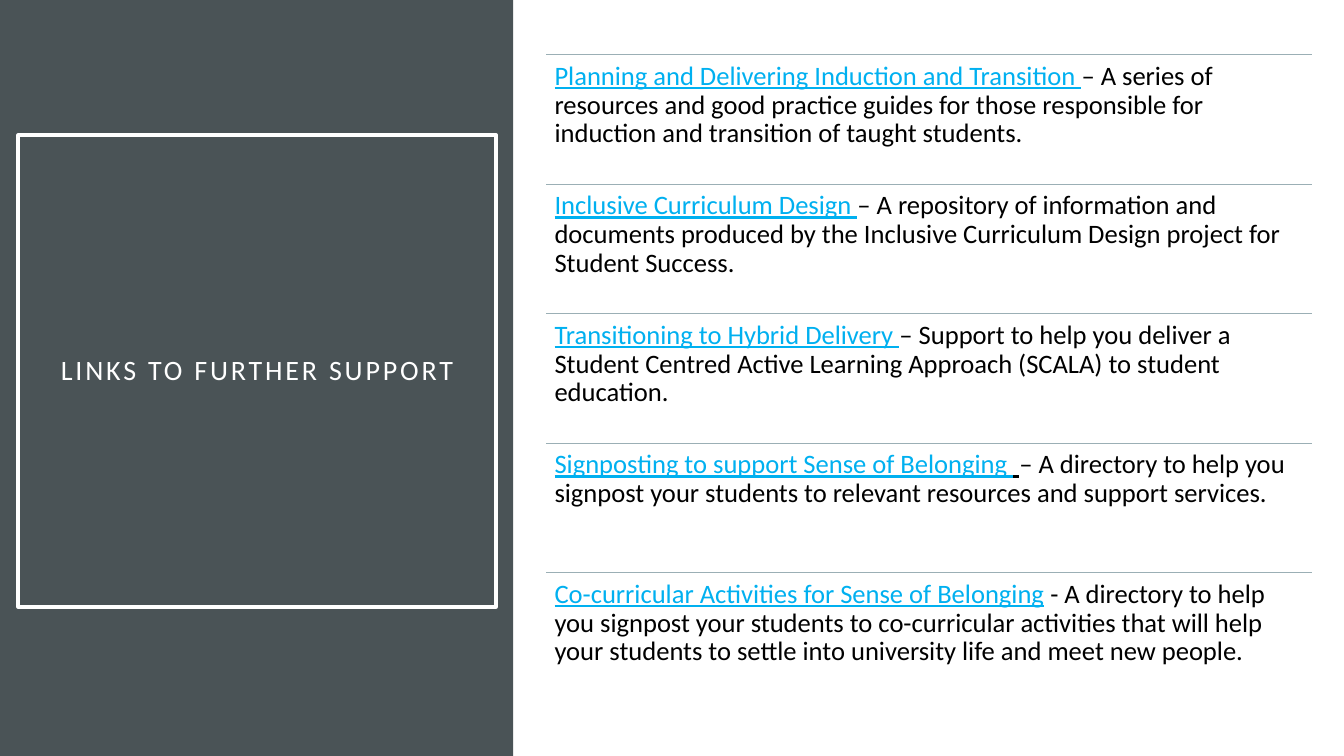
from dataclasses import dataclass

from lxml import etree
from pptx import Presentation
from pptx import util as u
from pptx.dml.color import RGBColor
from pptx.enum import shapes, text
from pptx.oxml.ns import qn


@dataclass(frozen=True)
class Theme:
    font: str = "Calibri"
    panel: str = "4A5356"
    white: str = "FFFFFF"
    ink: str = "000000"
    link: str = "00B0F0"
    rule: str = "9BAFB5"
    head: float = 20
    body: float = 19


ROWS = [
    [("Planning and Delivering Induction and Transition ", "link"),
     ("– A series of resources and good practice guides for those responsible "
      "for induction and transition of taught students.", "plain")],
    [("Inclusive Curriculum Design ", "link"),
     ("– A repository of information and documents produced by the Inclusive "
      "Curriculum Design project for Student Success.", "plain")],
    [("Transitioning to Hybrid Delivery ", "link"),
     ("– Support to help you deliver a Student Centred Active Learning "
      "Approach (SCALA) to student education.", "plain")],
    [("Signposting to support Sense of Belonging ", "link"),
     (" ", "under"),
     ("– A directory to help you signpost your students to relevant resources "
      "and support services.", "plain")],
    [("Co-curricular Activities for Sense of Belonging", "link"),
     (" - A directory to help you signpost your students to co-curricular "
      "activities that will help your students to settle into university life "
      "and meet new people.", "plain")],
]


def write(para, words, font, size, color, under=False, track=0):
    run = para.add_run()
    run.text = words
    run.font.name = font
    run.font.size = u.Pt(size)
    run.font.color.rgb = RGBColor.from_string(color)
    run.font.underline = under
    if track:
        run.font._element.set("spc", str(track * 100))


class Deck:
    """Draws the slide's elements in one theme."""

    def __init__(self, theme):
        self.theme = theme
        self.prs = Presentation()
        self.prs.slide_width = u.Inches(13.33)
        self.prs.slide_height = u.Inches(7.5)
        self.slide = self.prs.slides.add_slide(self.prs.slide_layouts[5])

    def frame(self, shape, inset, anchor):
        frame = shape.text_frame
        frame.word_wrap = True
        frame.auto_size = text.MSO_AUTO_SIZE.NONE
        frame.vertical_anchor = anchor
        frame.margin_left = frame.margin_right = u.Inches(inset)
        frame.margin_top = frame.margin_bottom = u.Inches(inset)
        para = frame.paragraphs[0]
        para.line_spacing = 0.9
        return para

    def panel(self, *box):
        shape = self.slide.shapes.add_shape(
            shapes.MSO_SHAPE.RECTANGLE, *map(u.Inches, box))
        shape.shadow.inherit = False
        shape.fill.solid()
        shape.fill.fore_color.rgb = RGBColor.from_string(self.theme.panel)
        shape.line.fill.background()
        self.slide.shapes._spTree.insert(2, shape._element)

    def title(self, words, *box):
        shape = self.slide.shapes.title
        shape.left, shape.top, shape.width, shape.height = map(u.Inches, box)
        shape.line.color.rgb = RGBColor.from_string(self.theme.white)
        shape.line.width = u.Pt(2.5)
        para = self.frame(shape, 0.2, text.MSO_ANCHOR.MIDDLE)
        para.alignment = text.PP_ALIGN.CENTER
        write(para, words, self.theme.font, self.theme.head, self.theme.white,
              track=2)

    def rule(self, left, top, width):
        line = self.slide.shapes.add_connector(
            shapes.MSO_CONNECTOR.STRAIGHT,
            *map(u.Inches, (left, top, left + width, top)))
        line.line.color.rgb = RGBColor.from_string(self.theme.rule)
        line.line.width = u.Pt(0.5)
        etree.SubElement(line._element.spPr, qn("a:effectLst"))

    def entry(self, parts, *box):
        shape = self.slide.shapes.add_textbox(*map(u.Inches, box))
        para = self.frame(shape, 0.08, text.MSO_ANCHOR.TOP)
        for words, kind in parts:
            color = self.theme.link if kind == "link" else self.theme.ink
            write(para, words, self.theme.font, self.theme.body, color,
                  under=kind != "plain")


def main():
    deck = Deck(Theme())
    deck.panel(0, 0, 5.09, 7.5)
    deck.title("LINKS TO FURTHER SUPPORT", 0.18, 1.34, 4.74, 4.68)
    left, top, width, step = 5.42, 0.54, 7.59, 1.285
    for i, parts in enumerate(ROWS):
        y = top + i * step
        deck.rule(left, y, width)
        deck.entry(parts, left, y, width, step)
    deck.prs.save("out.pptx")


if __name__ == "__main__":
    main()
